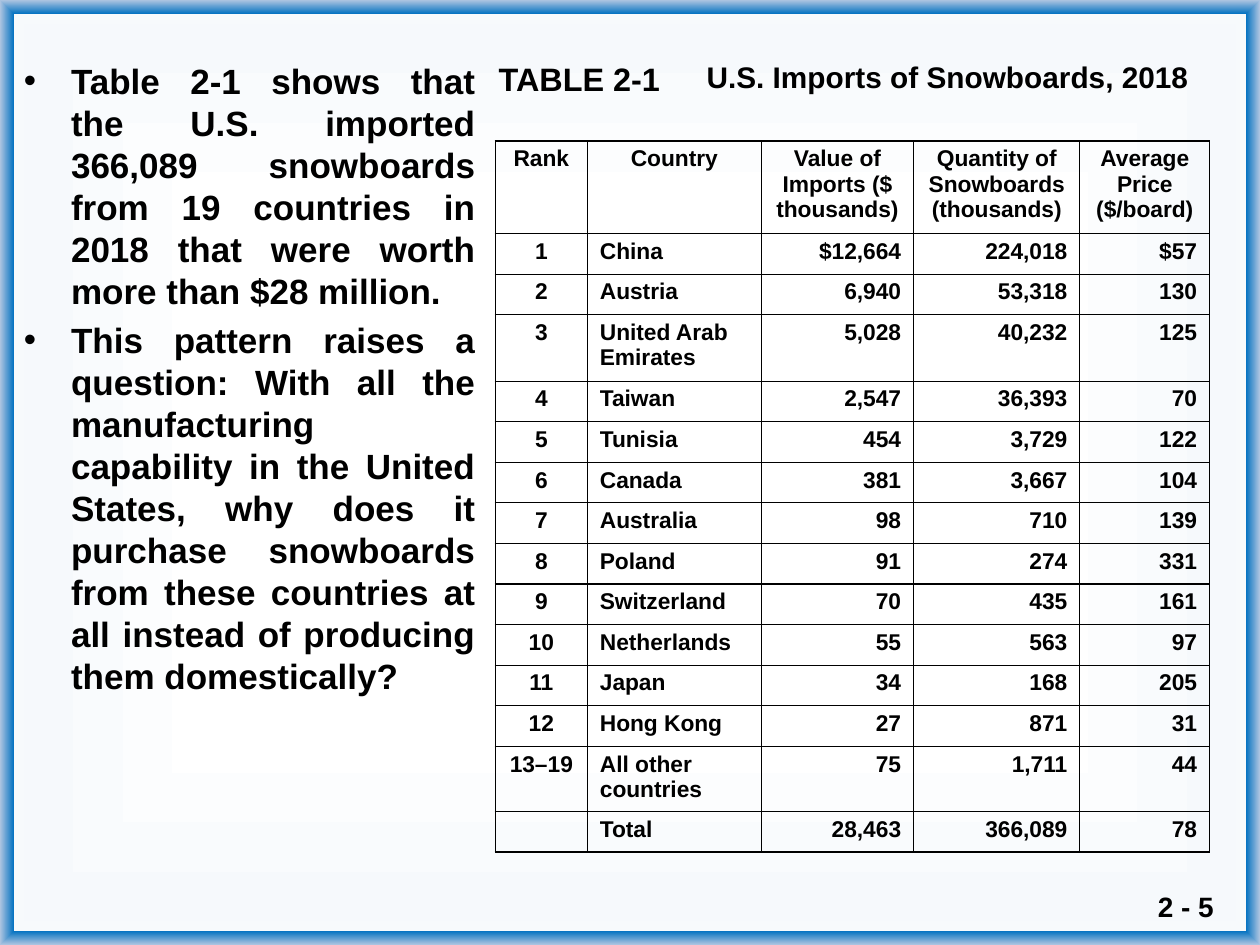
from lxml.etree import SubElement as Sub
from pptx import Presentation
from pptx.dml.color import RGBColor
from pptx.enum.text import PP_ALIGN as Align
from pptx.oxml.ns import qn
from pptx.util import Pt

BLACK = RGBColor(0, 0, 0)
WHITE = RGBColor(0xFF, 0xFF, 0xFF)
PALE = RGBColor(0xF6, 0xF9, 0xFC)
MIST = RGBColor(0xF7, 0xFA, 0xFC)
BLUE = RGBColor(0x00, 0x70, 0xC0)
SKY = RGBColor(0xB0, 0xC6, 0xE1)

STOPS = [(53, WHITE), (95, PALE), (97, MIST), (97, BLUE), (100, SKY)]
POINTS = [
    "Table 2-1 shows that the U.S. imported 366,089 snowboards from 19 "
    "countries in 2018 that were worth more than $28 million.",
    "This pattern raises a question: With all the manufacturing capability "
    "in the United States, why does it purchase snowboards from these "
    "countries at all instead of producing them domestically?",
]
HEADS = ["Rank", "Country", "Value of Imports ($ thousands)",
         "Quantity of Snowboards (thousands)", "Average\nPrice ($/board)"]
ROWS = [
    ("1", "China", "$12,664", "224,018", "$57"),
    ("2", "Austria", "6,940", "53,318", "130"),
    ("3", "United Arab Emirates", "5,028", "40,232", "125"),
    ("4", "Taiwan", "2,547", "36,393", "70"),
    ("5", "Tunisia", "454", "3,729", "122"),
    ("6", "Canada", "381", "3,667", "104"),
    ("7", "Australia", "98", "710", "139"),
    ("8", "Poland", "91", "274", "331"),
    ("9", "Switzerland", "70", "435", "161"),
    ("10", "Netherlands", "55", "563", "97"),
    ("11", "Japan", "34", "168", "205"),
    ("12", "Hong Kong", "27", "871", "31"),
    ("13–19", "All other countries", "75", "1,711", "44"),
    ("", "Total", "28,463", "366,089", "78"),
]
WIDTHS = [52.6, 99.4, 87.1, 95, 74.2]
ALIGNS = [Align.CENTER, Align.LEFT, Align.RIGHT, Align.RIGHT, Align.RIGHT]
TALL = {0: 51, 3: 38, 13: 36}


def set_font(para, size):
    font = para.font
    font.name, font.size, font.bold = "Arial", Pt(size), True
    font.color.rgb = BLACK


def add_text(left, top, width, height, lines, size):
    box = slide.shapes.add_textbox(Pt(left), Pt(top), Pt(width), Pt(height))
    frame = box.text_frame
    frame.word_wrap = True
    frame.text = "\n".join(lines)
    for para in frame.paragraphs:
        set_font(para, size)
    return frame


deck = Presentation()
deck.slide_width, deck.slide_height = Pt(720), Pt(540)
slide = deck.slides.add_slide(deck.slide_layouts[6])

# Background: white centre, blue rim
slide.background.fill.gradient()
grad = slide.element.find(".//" + qn("a:gradFill"))
for child in list(grad):
    grad.remove(child)
stops = Sub(grad, qn("a:gsLst"))
for pos, color in STOPS:
    stop = Sub(stops, qn("a:gs"), pos=str(pos * 1000))
    Sub(stop, qn("a:srgbClr"), val=str(color))
shade = Sub(grad, qn("a:path"), path="shape")
Sub(shade, qn("a:fillToRect"), l="50000", t="50000", r="50000", b="50000")

# Text
add_text(654.5, 504.7, 62, 26.6, ["2 - 5"], 16)
body = add_text(6.5, 30.2, 272.2, 351.4, POINTS, 20)
for para in body.paragraphs:
    para.alignment = Align.JUSTIFY
    para.line_spacing, para.space_before = Pt(24), Pt(4)
    props = para._p.get_or_add_pPr()
    props.set("marL", str(Pt(27)))
    props.set("indent", str(Pt(-27)))
    Sub(props, qn("a:buFont"), typeface="Arial")
    Sub(props, qn("a:buChar"), char="•")
add_text(277.9, 30.2, 112.3, 31.7, ["TABLE 2-1"], 18.5)
add_text(396.7, 30.2, 292.3, 37.4, ["U.S. Imports of Snowboards, 2018"], 17)

# Imports table
data = [HEADS] + ROWS
highs = [TALL.get(i, 23.2) for i in range(len(data))]
frame = slide.shapes.add_table(len(data), len(WIDTHS), Pt(283), Pt(80.6),
                               Pt(sum(WIDTHS)), Pt(sum(highs)))
table = frame.table
table.first_row = table.horz_banding = False
for col, width in zip(table.columns, WIDTHS):
    col.width = Pt(width)
for i, (row, high, texts) in enumerate(zip(table.rows, highs, data)):
    row.height = Pt(high)
    for cell, text, align in zip(row.cells, texts, ALIGNS):
        cell.text = text
        cell.margin_top = cell.margin_bottom = Pt(3)
        for para in cell.text_frame.paragraphs:
            para.alignment = Align.CENTER if i == 0 else align
            set_font(para, 13)
        props = cell._tc.get_or_add_tcPr()
        for side in ("lnL", "lnR", "lnT", "lnB"):
            line = Sub(props, qn("a:" + side), w=str(Pt(0.75)))
            Sub(Sub(line, qn("a:solidFill")), qn("a:srgbClr"), val=str(BLACK))
        cell.fill.background()

deck.save("out.pptx")
